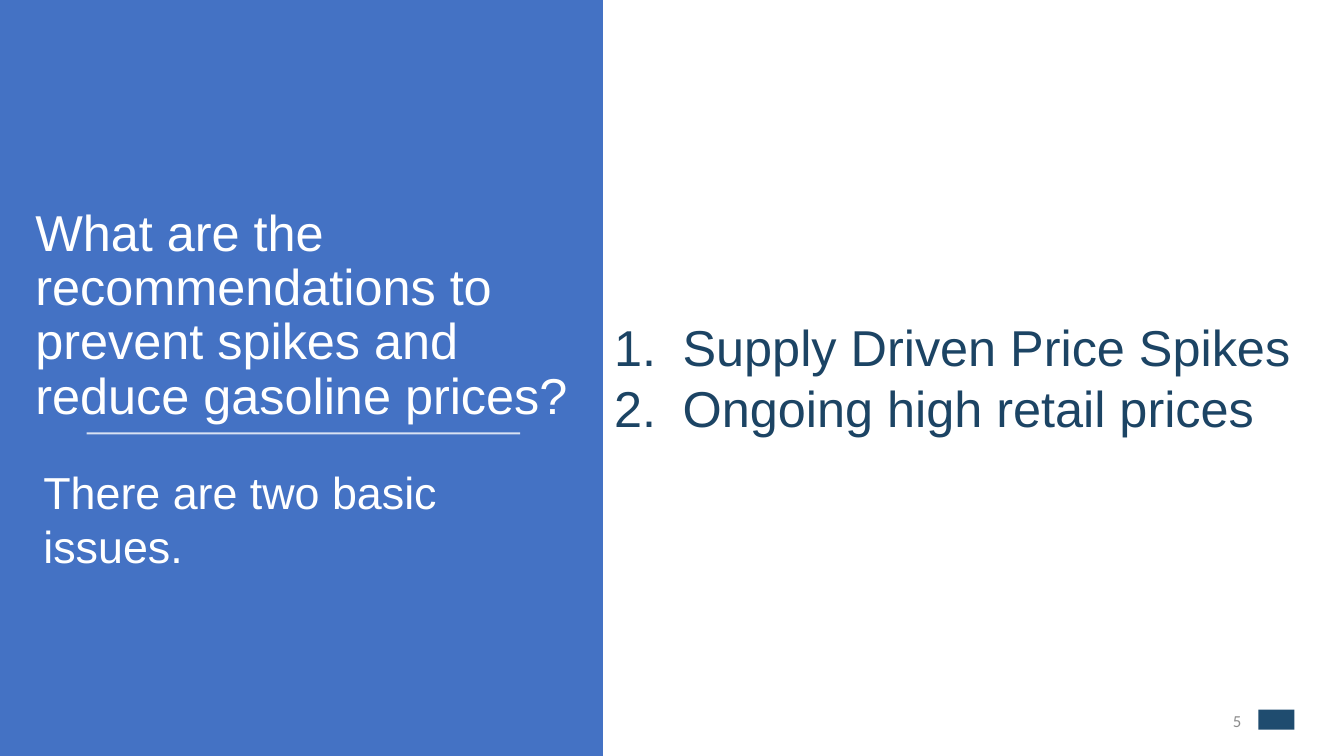
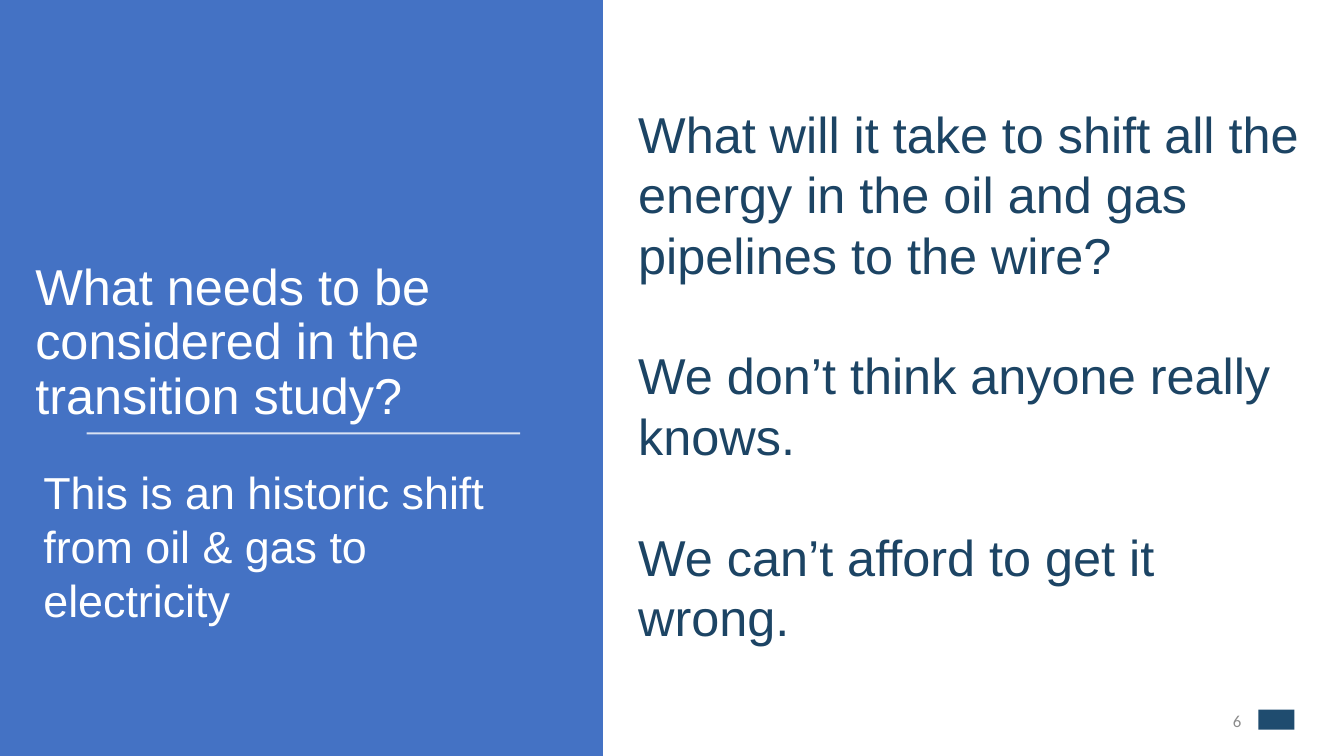
from dataclasses import dataclass

from lxml.etree import SubElement
from pptx import Presentation
from pptx.dml.color import RGBColor
from pptx.enum.shapes import MSO_CONNECTOR, MSO_SHAPE
from pptx.enum.text import MSO_ANCHOR, MSO_AUTO_SIZE, PP_ALIGN
from pptx.oxml.ns import qn
from pptx.util import Inches, Pt


@dataclass(frozen=True)
class Theme:
    panel: RGBColor = RGBColor(0x44, 0x72, 0xC4)
    white: RGBColor = RGBColor(0xFF, 0xFF, 0xFF)
    ink: RGBColor = RGBColor(0x1C, 0x44, 0x64)
    mark: RGBColor = RGBColor(0x1F, 0x4C, 0x6F)
    grey: RGBColor = RGBColor(0x8C, 0x8C, 0x8C)
    font: str = "Arial"
    number_font: str = "Calibri"
    large: Pt = Pt(36)
    medium: Pt = Pt(32)
    small: Pt = Pt(12)


theme = Theme()
FIRST_NUMBER = 5

PAGES = [
    {
        "title": "What are the recommendations to prevent spikes and reduce gasoline prices?",
        "subtitle": "There are two basic issues.",
        "points": ["Supply Driven Price Spikes", "Ongoing high retail prices"],
        "area": (5.98, 3.09, 7.1, 1.31),
        "numbered": True,
        "gap": Pt(0),
    },
    {
        "title": "What needs to be considered in the transition study?",
        "subtitle": "This is an historic shift from oil & gas to electricity",
        "points": [
            "What will it take to shift all the energy in the oil and gas pipelines to the wire?",
            "We don’t think anyone really knows.",
            "We can’t afford to get it wrong.",
        ],
        "area": (6.23, 0.97, 6.9, 5.55),
        "numbered": False,
        "gap": Pt(43),
    },
]


def place(box, area, anchor):
    for name, value in zip(("left", "top", "width", "height"), area):
        setattr(box, name, Inches(value))
    frame_format = {
        "word_wrap": True,
        "auto_size": MSO_AUTO_SIZE.NONE,
        "vertical_anchor": anchor,
    }
    for name, value in frame_format.items():
        setattr(box.text_frame, name, value)


def write(box, lines, size, color, line_spacing=1.0, gap=Pt(0), numbered=False):
    box.text_frame.text = "\n".join(lines)
    for index, para in enumerate(box.text_frame.paragraphs):
        para_format = {
            "alignment": PP_ALIGN.LEFT,
            "line_spacing": line_spacing,
            "space_before": gap if index else Pt(0),
            "space_after": Pt(0),
        }
        for name, value in para_format.items():
            setattr(para, name, value)
        for span in para.runs:
            for name, value in {"name": theme.font, "size": size}.items():
                setattr(span.font, name, value)
            span.font.color.rgb = color
        properties = para._p.get_or_add_pPr()
        properties.set("marL", str(Inches(0.69) if numbered else 0))
        properties.set("indent", str(Inches(-0.68) if numbered else 0))
        if numbered:
            SubElement(properties, qn("a:buAutoNum"), type="arabicPeriod")
        else:
            SubElement(properties, qn("a:buNone"))


deck = Presentation()
deck.slide_width, deck.slide_height = Inches(13.33), Inches(7.5)
deck.element.set("firstSlideNum", str(FIRST_NUMBER))
two_content = deck.slide_layouts.get_by_name("Two Content")

for number, content in enumerate(PAGES, FIRST_NUMBER):
    page = deck.slides.add_slide(two_content)
    title, subtitle, points = page.placeholders

    # Blue panel behind the text, and the plain mark in the corner
    panel = page.shapes.add_shape(
        MSO_SHAPE.RECTANGLE, 0, 0, Inches(5.98), deck.slide_height
    )
    mark = page.shapes.add_shape(
        MSO_SHAPE.RECTANGLE, Inches(12.48), Inches(7.04), Inches(0.36), Inches(0.2)
    )
    for block, color in ((panel, theme.panel), (mark, theme.mark)):
        block.shadow.inherit = False
        block.fill.solid()
        block.fill.fore_color.rgb = color
        block.line.fill.background()
        title.element.addprevious(block.element)

    # Title and subtitle on the panel
    place(title, (0.25, 0.95, 5.52, 3.32), MSO_ANCHOR.BOTTOM)
    write(title, [content["title"]], theme.large, theme.white, line_spacing=0.9)
    place(subtitle, (0.33, 4.56, 4.99, 1.72), MSO_ANCHOR.TOP)
    write(subtitle, [content["subtitle"]], theme.medium, theme.white)

    # Translucent rule between them
    rule = page.shapes.add_connector(
        MSO_CONNECTOR.STRAIGHT, Inches(0.86), Inches(4.3), Inches(5.16), Inches(4.3)
    )
    rule.line.width = Pt(1.5)
    rule.line.color.rgb = theme.white
    rule_color = rule.element.spPr.find(".//" + qn("a:srgbClr"))
    SubElement(rule_color, qn("a:alpha"), val="80000")
    SubElement(rule.element.spPr, qn("a:effectLst"))

    # Main points
    place(points, content["area"], MSO_ANCHOR.TOP)
    write(
        points, content["points"], theme.large, theme.ink,
        gap=content["gap"], numbered=content["numbered"],
    )

    # Page number as a live field
    footer = page.shapes.add_textbox(0, 0, 0, 0)
    place(footer, (11.47, 6.95, 0.94, 0.4), MSO_ANCHOR.MIDDLE)
    para = footer.text_frame.paragraphs[0]
    para.alignment = PP_ALIGN.RIGHT
    para.space_after = Pt(6)
    field = SubElement(
        para._p, qn("a:fld"),
        id="{B6F15528-21DE-4FAA-801E-634DDDAF4B2B}", type="slidenum",
    )
    span = SubElement(field, qn("a:rPr"), lang="en-US", sz=str(int(theme.small.pt * 100)))
    fill = SubElement(span, qn("a:solidFill"))
    SubElement(fill, qn("a:srgbClr"), val=str(theme.grey))
    SubElement(span, qn("a:latin"), typeface=theme.number_font)
    SubElement(field, qn("a:t")).text = str(number)

deck.save("out.pptx")
